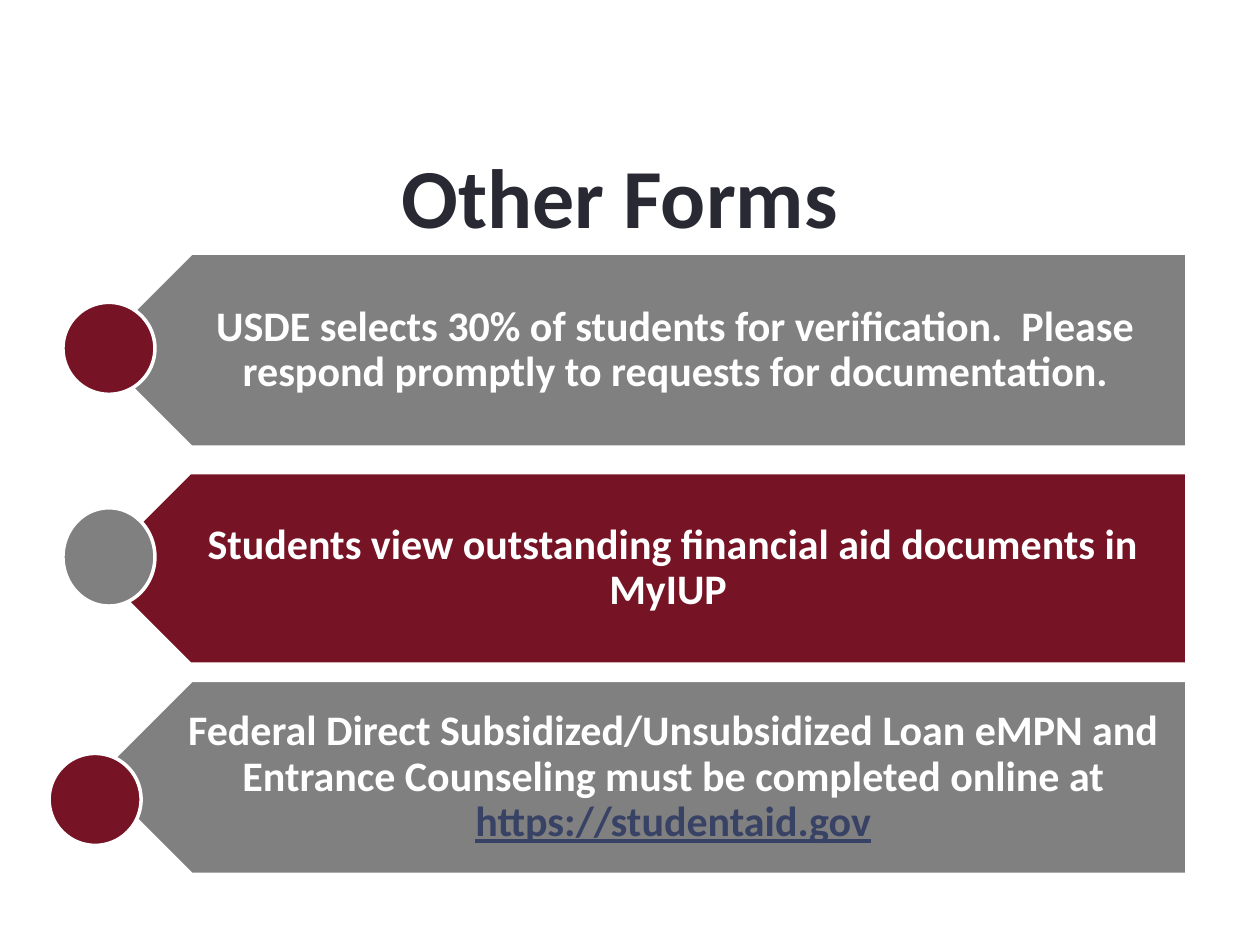
from pptx import Presentation
from pptx.dml.color import RGBColor
from pptx.enum.shapes import MSO_SHAPE
from pptx.enum.text import MSO_ANCHOR, PP_ALIGN
from pptx.util import Inches, Pt

OVAL = MSO_SHAPE.OVAL
MIDDLE = MSO_ANCHOR.MIDDLE
CENTER = PP_ALIGN.CENTER

GRAY, MAROON, WHITE = "808080", "761425", "FFFFFF"
DARK, LINK = "292934", "384265"
BANNER_LEFT, BANNER_RIGHT = 0.75, 9.42
DOT_WIDTH = 0.73

# top, height, fill, (left, top, right, bottom) insets, spans of (text, format)
BANNERS = [
    (2.01, 1.54, GRAY, (0.71, 0.08, 0.16, 0.08), [
        ("USDE selects 30% of students for verification.  Please respond "
         "promptly to requests for documentation.", {})]),
    (5.4, 1.54, GRAY, (0.71, 0.1, 0.19, 0.1), [
        ("Federal Direct Subsidized/Unsubsidized Loan eMPN and Entrance "
         "Counseling must be completed online at ", {}),
        ("https://studentaid.gov", {"color": LINK, "underline": True})]),
    (3.75, 1.52, MAROON, (0.7, 0.1, 0.19, 0.1), [
        ("Students view outstanding financial aid documents in MyIUP ", {})]),
]
# left, top, height, fill
DOTS = [
    (0.5, 2.4, 0.73, MAROON),
    (0.5, 4.03, 0.78, GRAY),
    (0.39, 5.98, 0.73, MAROON),
]


def rgb(color):
    return RGBColor.from_string(color)


def paint(shape, fill):
    """Give a shape a solid fill, a white outline and no shadow."""
    shape.shadow.inherit = False
    shape.fill.solid()
    shape.fill.fore_color.rgb = rgb(fill)
    shape.line.color.rgb = rgb(WHITE)
    shape.line.width = Pt(2)


def write(shape, spans, size, color, line_spacing=1.0):
    """Fill a shape with one centred bold paragraph."""
    frame = shape.text_frame
    frame.word_wrap = True
    frame.vertical_anchor = MIDDLE
    para = frame.paragraphs[0]
    para.alignment = CENTER
    para.line_spacing = line_spacing
    for text, changes in spans:
        span = para.add_run()
        span.text = text
        style = {"name": "Calibri", "size": Pt(size), "bold": True,
                 "color": color, **changes}
        span.font.color.rgb = rgb(style.pop("color"))
        for name, value in style.items():
            setattr(span.font, name, value)


def add_title(page, text):
    box = page.shapes.add_textbox(Inches(0.42), Inches(0.92), Inches(9), Inches(1.25))
    write(box, [(text, {})], 48, DARK)


def add_banner(page, top, height, fill, insets, spans):
    """Add a bar whose left end is a point half as deep as the bar is high."""
    bottom, middle = top + height, top + height / 2
    shoulder = BANNER_LEFT + height / 2
    corners = [(BANNER_RIGHT, bottom), (shoulder, bottom), (BANNER_LEFT, middle),
               (shoulder, top), (BANNER_RIGHT, top)]
    start, *rest = [(Inches(x), Inches(y)) for x, y in corners]
    builder = page.shapes.build_freeform(*start)
    builder.add_line_segments(rest, close=True)
    banner = builder.convert_to_shape()
    paint(banner, fill)
    for side, inset in zip(("left", "top", "right", "bottom"), insets):
        setattr(banner.text_frame, f"margin_{side}", Inches(inset))
    write(banner, spans, 24, WHITE, line_spacing=0.9)


def add_dot(page, left, top, height, fill):
    dot = page.shapes.add_shape(OVAL, Inches(left), Inches(top),
                                Inches(DOT_WIDTH), Inches(height))
    paint(dot, fill)


def main():
    deck = Presentation()
    deck.slide_width, deck.slide_height = Inches(10), Inches(7.5)
    page = deck.slides.add_slide(deck.slide_layouts[6])
    add_title(page, "Other Forms")
    for banner in BANNERS:
        add_banner(page, *banner)
    for dot in DOTS:
        add_dot(page, *dot)
    deck.save("out.pptx")


if __name__ == "__main__":
    main()
